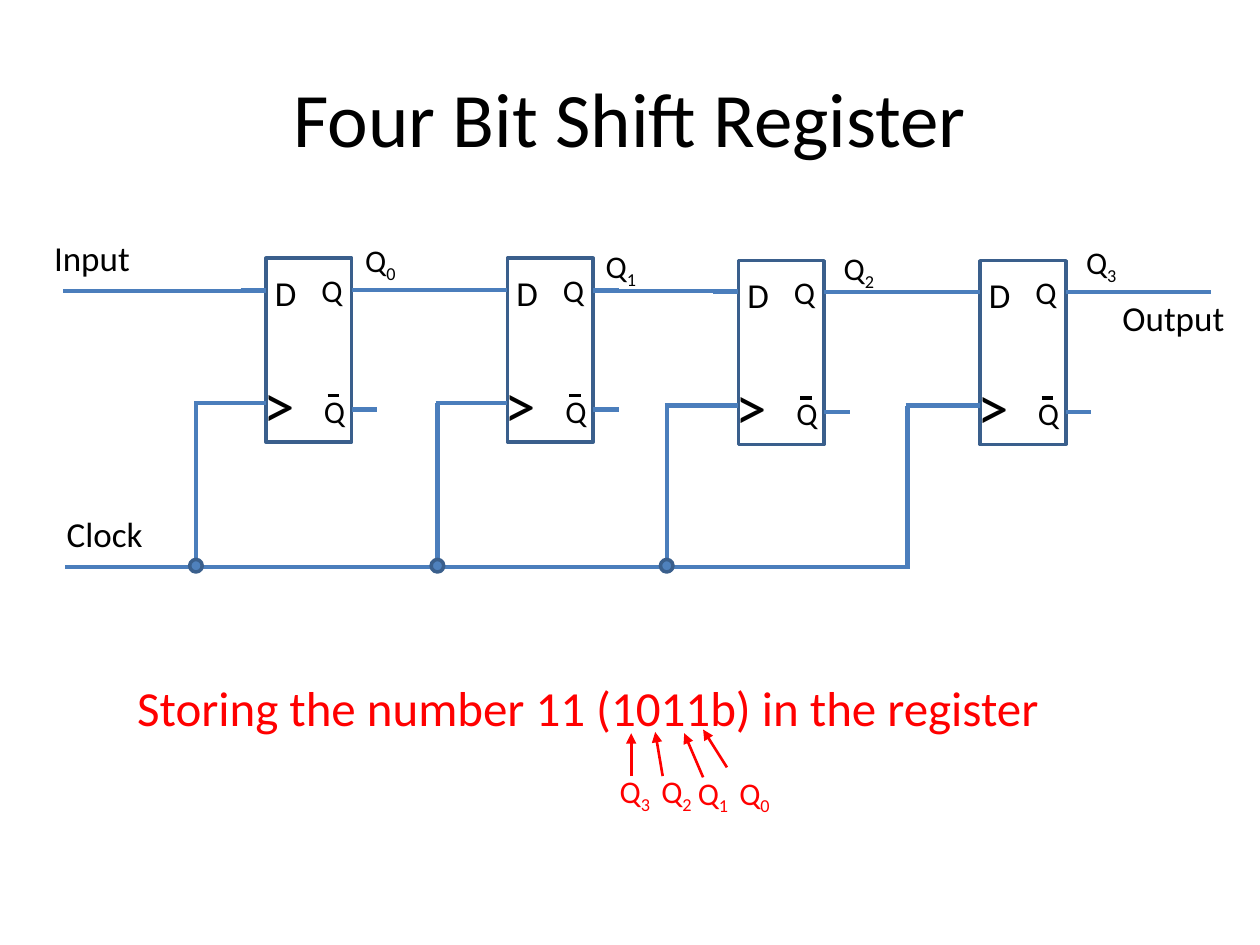
from lxml.etree import SubElement
from pptx import Presentation
from pptx.dml.color import RGBColor
from pptx.enum.shapes import MSO_CONNECTOR, MSO_SHAPE
from pptx.enum.text import MSO_ANCHOR, MSO_AUTO_SIZE, PP_ALIGN
from pptx.oxml.ns import qn
from pptx.util import Pt

FONT = "Calibri"
BLACK, WHITE, RED = "000000", "FFFFFF", "FF0000"
WIRE, OUTLINE, JUNCTION = "4B7EBC", "3A5F8C", "4F81BD"
STAGE_WIDTH, STAGE_HEIGHT = 49, 105
DATA_Y, CLOCK_Y, INVERTED_Y = 18, 82.8, 86.4
BUS_Y = 324


def hex_color(value):
    return RGBColor.from_string(value)


def add_run(paragraph, text, size, color, subscript=False):
    run = paragraph.add_run()
    run.text = text
    run.font.name = FONT
    run.font.size = Pt(size)
    run.font.color.rgb = hex_color(color)
    if subscript:
        run.font._element.set("baseline", "-25000")


def add_label(slide, left, top, width, height, text, size, color=BLACK, index=None):
    label = slide.shapes.add_textbox(Pt(left), Pt(top), Pt(width), Pt(height))
    frame = label.text_frame
    frame.word_wrap = True
    frame.auto_size = MSO_AUTO_SIZE.SHAPE_TO_FIT_TEXT
    frame.margin_right = Pt(0)
    add_run(frame.paragraphs[0], text, size, color)
    if index is not None:
        add_run(frame.paragraphs[0], str(index), size, color, subscript=True)


def add_wire(slide, start, end, color=WIRE, weight=2.5, arrow=False):
    wire = slide.shapes.add_connector(
        MSO_CONNECTOR.STRAIGHT, *(Pt(value) for value in (*start, *end)))
    wire.line.color.rgb = hex_color(color)
    wire.line.width = Pt(weight)
    if arrow:
        SubElement(wire.line._get_or_add_ln(), qn("a:tailEnd"), type="triangle")
    SubElement(wire._element.spPr, qn("a:effectLst"))


def add_outlined(slide, preset, left, top, width, height, fill):
    outlined = slide.shapes.add_shape(preset, Pt(left), Pt(top), Pt(width), Pt(height))
    outlined.shadow.inherit = False
    outlined.fill.solid()
    outlined.fill.fore_color.rgb = hex_color(fill)
    outlined.line.color.rgb = hex_color(OUTLINE)
    outlined.line.width = Pt(2)


def add_flip_flop(slide, left, top):
    right = left + STAGE_WIDTH
    add_outlined(slide, MSO_SHAPE.RECTANGLE, left, top, STAGE_WIDTH, STAGE_HEIGHT, WHITE)
    for pin, dx, dy, width, height, size in (
        ("D", -2, 4, 13, 32, 20),
        (">", -8.6, 57.6, 24, 30, 36),
        ("Q", 24.5, 3.6, 13, 29, 18),
        ("Q", 26, 72.7, 13, 29, 18),
    ):
        add_label(slide, left + dx, top + dy, width, height, pin, size)
    add_wire(slide, (left + 35.3, top + 78.5), (left + 41.8, top + 78.5), BLACK, 2)
    for reach, weight, drop in ((8, 0.75, 0.7), (14.5, 2.5, 0)):
        for y in (DATA_Y, INVERTED_Y):
            add_wire(slide, (right, top + y), (right + reach, top + y), WIRE, weight)
        for y in (DATA_Y + drop, CLOCK_Y + drop):
            add_wire(slide, (left - reach, top + y), (left, top + y), WIRE, weight)


def add_clock_tap(slide, tap, stage_left, stage_top):
    y = stage_top + CLOCK_Y
    add_wire(slide, (tap, BUS_Y), (tap, y))
    add_wire(slide, (tap - 1, y), (stage_left, y))


def add_title(slide):
    title = slide.shapes.title
    title.left, title.top, title.width, title.height = Pt(36), Pt(21.6), Pt(648), Pt(90)
    title.text_frame.vertical_anchor = MSO_ANCHOR.MIDDLE
    heading = title.text_frame.paragraphs[0]
    heading.alignment = PP_ALIGN.CENTER
    add_run(heading, "Four Bit Shift Register", 44, BLACK)


def add_register(slide):
    stages = [(152, 147.6), (290, 147.6), (422, 149), (560, 149)]
    taps = [112, 250, 381, 518.5]
    output_labels = [(201.6, 134), (339, 137.5), (475, 139), (613.5, 135.4)]
    data_wires = [(36, 152, 166.3), (201, 290, 165.6), (339, 422, 166.3),
                  (473, 556, 167), (609, 692, 167)]

    for left, top in stages:
        add_flip_flop(slide, left, top)
    add_wire(slide, (37.4, BUS_Y), (519.8, BUS_Y))
    for tap, (left, top) in zip(taps, stages):
        add_clock_tap(slide, tap, left, top)
    for start, end, y in data_wires:
        add_wire(slide, (start, y), (end, y))

    add_label(slide, 31, 289.4, 61, 32, "Clock", 20)
    add_label(slide, 23.8, 131.8, 61, 32, "Input", 20)
    add_label(slide, 634.3, 165.6, 78.5, 32, "Output", 20)
    for index, (left, top) in enumerate(output_labels):
        add_label(slide, left, top, 34, 29, "Q", 18, index=index)
    for tap in taps[:-1]:
        add_outlined(slide, MSO_SHAPE.OVAL, tap - 3.6, BUS_Y - 4.3, 7.2, 7.2, JUNCTION)


def add_stored_number(slide):
    add_label(slide, 71.3, 383.8, 620.6, 41,
              "Storing the number 11 (1011b) in the register", 28, RED)
    bits = [
        (415.4, 438.5, (415.4, 438.5), (401.8, 416.9)),
        (391.7, 438.5, (401.8, 444.2), (391, 419)),
        (370.8, 437.8, (378.7, 443.5), (374.4, 418.3)),
        (347, 437.8, (360.7, 443.5), (360.7, 419)),
    ]
    for index, (left, top, start, end) in enumerate(bits):
        add_label(slide, left, top, 33, 29, "Q", 18, RED, index)
        add_wire(slide, start, end, RED, 1.5, arrow=True)


def main():
    deck = Presentation()
    deck.slide_width, deck.slide_height = Pt(720), Pt(540)
    slide = deck.slides.add_slide(deck.slide_layouts[5])
    add_title(slide)
    add_register(slide)
    add_stored_number(slide)
    deck.save("out.pptx")


if __name__ == "__main__":
    main()
